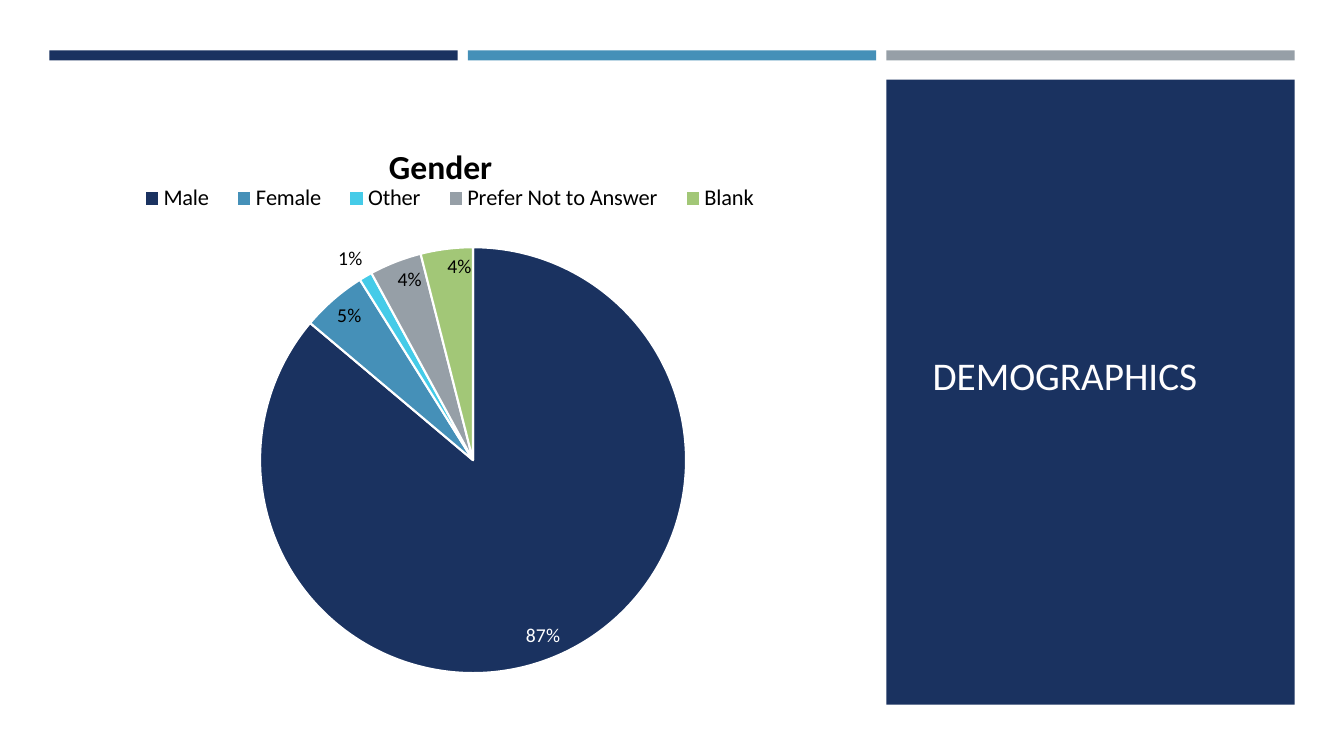
from lxml import etree
from pptx import Presentation
from pptx.chart.data import CategoryChartData
from pptx.dml.color import RGBColor
from pptx.enum.chart import XL_CHART_TYPE, XL_LABEL_POSITION as LabelPos, XL_LEGEND_POSITION
from pptx.enum.shapes import MSO_SHAPE
from pptx.enum.text import MSO_ANCHOR, PP_ALIGN
from pptx.oxml.ns import qn
from pptx.util import Inches, Pt

FONT = "Calibri"
COLORS = {
    "navy": "1A3260",
    "blue": "4590B8",
    "cyan": "45CBE8",
    "gray": "969FA7",
    "green": "A2C777",
    "black": "000000",
    "white": "FFFFFF",
    "title": "FFFEFF",
}
GENDERS = [
    ("Male", 87, "navy"),
    ("Female", 5, "blue"),
    ("Other", 1, "cyan"),
    ("Prefer Not to Answer", 4, "gray"),
    ("Blank", 4, "green"),
]
PERCENT = '0"%"'
COLUMN_LEFT, COLUMN_WIDTH, COLUMN_STEP = 0.49, 4.05, 4.15


def rgb(name):
    return RGBColor.from_string(COLORS[name])


def style_font(font, size, color, bold=False):
    font.name = FONT
    font.size = Pt(size)
    font.bold = bold
    font.color.rgb = rgb(color)


def add_block(slide, column, top, height, color):
    """Add a plain rectangle that fills one of the three columns."""
    left = COLUMN_LEFT + column * COLUMN_STEP
    block = slide.shapes.add_shape(
        MSO_SHAPE.RECTANGLE, Inches(left), Inches(top), Inches(COLUMN_WIDTH), Inches(height))
    block.shadow.inherit = False
    block.fill.solid()
    block.fill.fore_color.rgb = rgb(color)
    block.line.fill.background()


def place_title(slide, text):
    title = slide.shapes.title
    title.left, title.top = Inches(9.15), Inches(1.14)
    title.width, title.height = Inches(3.34), Inches(5.15)
    frame = title.text_frame
    frame.word_wrap = True
    frame.vertical_anchor = MSO_ANCHOR.MIDDLE
    paragraph = frame.paragraphs[0]
    paragraph.alignment = PP_ALIGN.LEFT
    run = paragraph.add_run()
    run.text = text
    style_font(run.font, 28, "title")
    # Bring the title in front of the panel
    slide.shapes.element.append(title.element)


def set_layout(part, index, **fractions):
    """Position a chart part by fractions of the chart area."""
    for old in part.findall(qn("c:layout")):
        part.remove(old)
    layout = etree.Element(qn("c:layout"))
    manual = etree.SubElement(layout, qn("c:manualLayout"))
    if "w" in fractions and part.tag == qn("c:plotArea"):
        etree.SubElement(manual, qn("c:layoutTarget")).set("val", "inner")
    for axis in ("x", "y"):
        etree.SubElement(manual, qn(f"c:{axis}Mode")).set("val", "edge")
    for key, value in fractions.items():
        etree.SubElement(manual, qn(f"c:{key}")).set("val", str(value))
    part.insert(index, layout)


def style_slices(plot):
    plot.vary_by_categories = True
    plot.has_data_labels = True
    labels = plot.data_labels
    labels.show_value = True
    labels.show_percentage = False
    labels.number_format = PERCENT
    labels.number_format_is_linked = False
    labels.position = LabelPos.INSIDE_END
    style_font(labels.font, 14, "black")

    for index, (name, _, color) in enumerate(GENDERS):
        point = plot.series[0].points[index]
        point.format.fill.solid()
        point.format.fill.fore_color.rgb = rgb(color)
        point.format.line.color.rgb = rgb("white")
        point.format.line.width = Pt(1.5)
        label = point.data_label
        style_font(label.font, 14, "white" if name == "Male" else "black")
        label.position = LabelPos.OUTSIDE_END if name == "Other" else LabelPos.INSIDE_END


def add_gender_pie(slide):
    data = CategoryChartData(number_format=PERCENT)
    data.categories = [name for name, _, _ in GENDERS]
    data.add_series("Series 1", [share for _, share, _ in GENDERS])
    chart = slide.shapes.add_chart(
        XL_CHART_TYPE.PIE, Inches(0.53), Inches(1.14), Inches(7.78), Inches(5.71), data).chart
    style_font(chart.font, 10, "black")

    chart.has_title = True
    heading = chart.chart_title.text_frame.paragraphs[0].add_run()
    heading.text = "Gender"
    style_font(heading.font, 24, "black", bold=True)

    chart.has_legend = True
    chart.legend.position = XL_LEGEND_POSITION.TOP
    chart.legend.include_in_layout = False
    style_font(chart.legend.font, 16, "black")

    style_slices(chart.plots[0])
    body = chart.element.find(qn("c:chart"))
    set_layout(body.find(qn("c:title")), 1, x=0.42, y=0.04)
    set_layout(body.find(qn("c:legend")), 1, x=0.09, y=0.11, w=0.83, h=0.07)
    set_layout(body.find(qn("c:plotArea")), 0, x=0.07, y=0.23, w=0.93, h=0.74)


def main():
    deck = Presentation()
    deck.slide_width, deck.slide_height = Inches(13.33), Inches(7.5)
    slide = deck.slides.add_slide(deck.slide_layouts[5])
    slide.background.fill.solid()
    slide.background.fill.fore_color.rgb = rgb("white")

    for column, color in enumerate(("navy", "blue", "gray")):
        add_block(slide, column, 0.5, 0.1, color)
    add_block(slide, 2, 0.79, 6.2, "navy")
    place_title(slide, "DEMOGRAPHICS")
    add_gender_pie(slide)
    deck.save("out.pptx")


if __name__ == "__main__":
    main()
